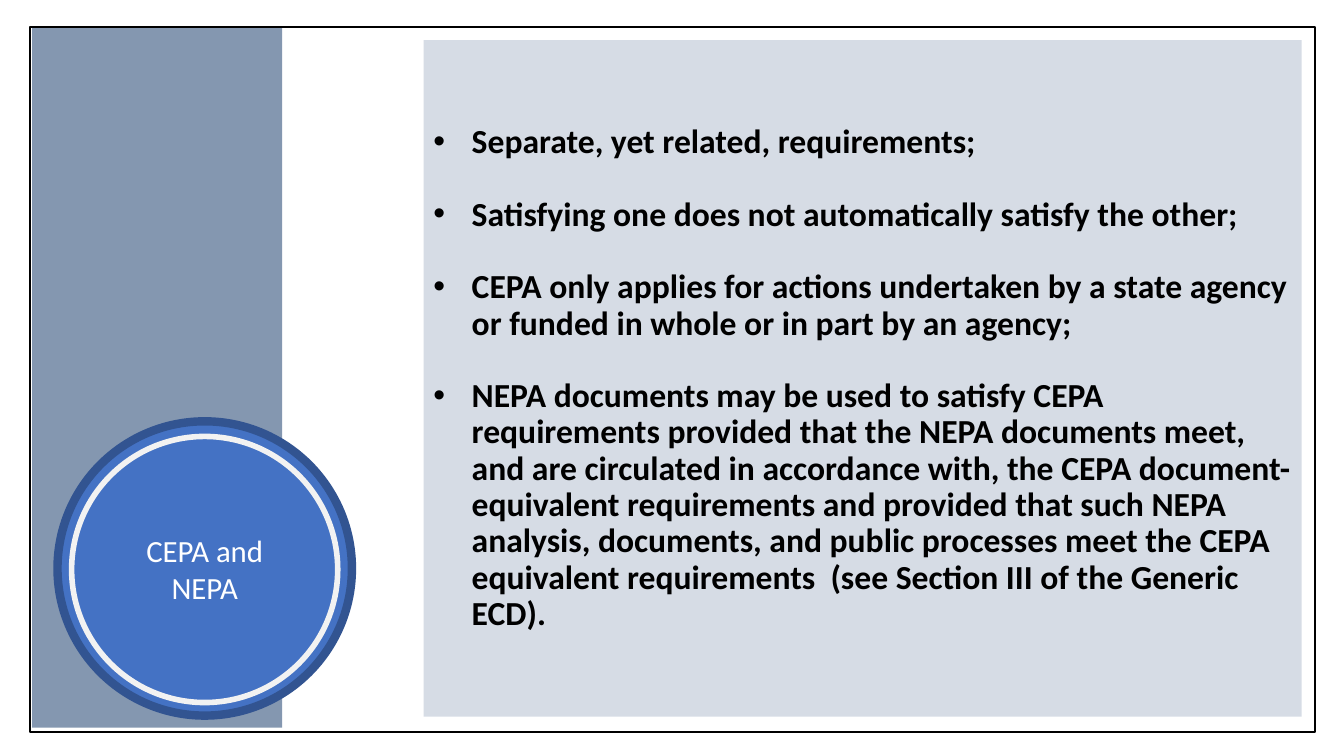
"""Build the CEPA and NEPA comparison slide."""
from dataclasses import dataclass
from typing import Optional

from lxml.etree import SubElement
from pptx import Presentation
from pptx.dml.color import RGBColor
from pptx.enum.shapes import MSO_SHAPE as Shape
from pptx.enum.text import MSO_ANCHOR as Anchor, PP_ALIGN as Align
from pptx.oxml.ns import qn
from pptx.util import Inches, Pt

SLIDE_W, SLIDE_H = Inches(13.33), Inches(7.5)
HANGING = Inches(0.38)


@dataclass
class Panel:
    """A preset shape placed in percent of the slide's width and height."""
    left: float
    top: float
    width: float
    height: float
    kind: Shape = Shape.RECTANGLE
    fill: Optional[str] = None
    line: Optional[str] = None
    weight: float = 0


SIDE_BAND = Panel(2.4, 3.6, 18.6, 92.67, fill="8497B0")
FRAME = Panel(2.25, 3.6, 95.57, 93.2, line="000000", weight=1.5)
BODY = Panel(31.51, 5.33, 65.34, 89.47, fill="D6DCE5")
DISC = Panel(4.28, 55.73, 21.91, 38.93, Shape.OVAL, "4472C4", "325491", 6)
RING = Panel(5.33, 57.73, 19.8, 35.2, Shape.OVAL, line="F2F2F2", weight=4)

POINTS = [
    "Separate, yet related, requirements;",
    "Satisfying one does not automatically satisfy the other;",
    "CEPA only applies for actions undertaken by a state agency or funded "
    "in whole or in part by an agency;",
    "NEPA documents may be used to satisfy CEPA requirements provided that "
    "the NEPA documents meet, and are circulated in accordance with, the "
    "CEPA document-equivalent requirements and provided that such NEPA "
    "analysis, documents, and public processes meet the CEPA equivalent "
    "requirements  (see Section III of the Generic ECD).",
]


def rgb(value: str) -> RGBColor:
    """Turn a hex string into a colour."""
    return RGBColor.from_string(value)


def draw(s, panel: Panel):
    """Draw one panel and return its shape."""
    sp = s.shapes.add_shape(
        panel.kind,
        round(SLIDE_W * panel.left / 100), round(SLIDE_H * panel.top / 100),
        round(SLIDE_W * panel.width / 100), round(SLIDE_H * panel.height / 100))
    sp.shadow.inherit = False
    if panel.fill:
        sp.fill.solid()
        sp.fill.fore_color.rgb = rgb(panel.fill)
    else:
        sp.fill.background()
    if panel.line:
        sp.line.color.rgb = rgb(panel.line)
        sp.line.width = Pt(panel.weight)
    else:
        sp.line.fill.background()
    return sp


def add_bullet(p) -> None:
    """Give a paragraph a hanging round bullet."""
    props = p._p.get_or_add_pPr()
    props.set("marL", str(HANGING))
    props.set("indent", str(-HANGING))
    SubElement(props, qn("a:buFont"), typeface="Arial")
    SubElement(props, qn("a:buChar"), char="•")


def write(sp, lines: list[str], *, size: float, color: str,
          bold: bool = False, align: Align = Align.LEFT,
          bullets: bool = False, spacing: float = 1, gap: float = 0,
          inset: float = 0.1) -> None:
    """Fill a shape with formatted paragraphs."""
    tf = sp.text_frame
    tf.word_wrap = True
    tf.vertical_anchor = Anchor.MIDDLE
    tf.margin_left = tf.margin_right = Inches(inset)
    for i, line in enumerate(lines):
        p = tf.add_paragraph() if i else tf.paragraphs[0]
        if bullets:
            add_bullet(p)
        p.alignment = align
        p.line_spacing = spacing
        if i:
            p.space_before = Pt(gap)
        r = p.add_run()
        r.text = line
        r.font.name = "Calibri"
        r.font.size = Pt(size)
        r.font.bold = bold
        r.font.color.rgb = rgb(color)


def main() -> None:
    """Build and save the slide."""
    prs = Presentation()
    prs.slide_width, prs.slide_height = SLIDE_W, SLIDE_H
    s = prs.slides.add_slide(prs.slide_layouts[6])
    draw(s, SIDE_BAND)
    draw(s, FRAME)
    write(draw(s, BODY), POINTS, size=24, color="000000", bold=True,
          bullets=True, spacing=0.9, gap=26)
    write(draw(s, DISC), ["CEPA and NEPA"], size=22, color="FFFFFF",
          align=Align.CENTER, inset=0.2)
    draw(s, RING)
    prs.save("out.pptx")


if __name__ == "__main__":
    main()
